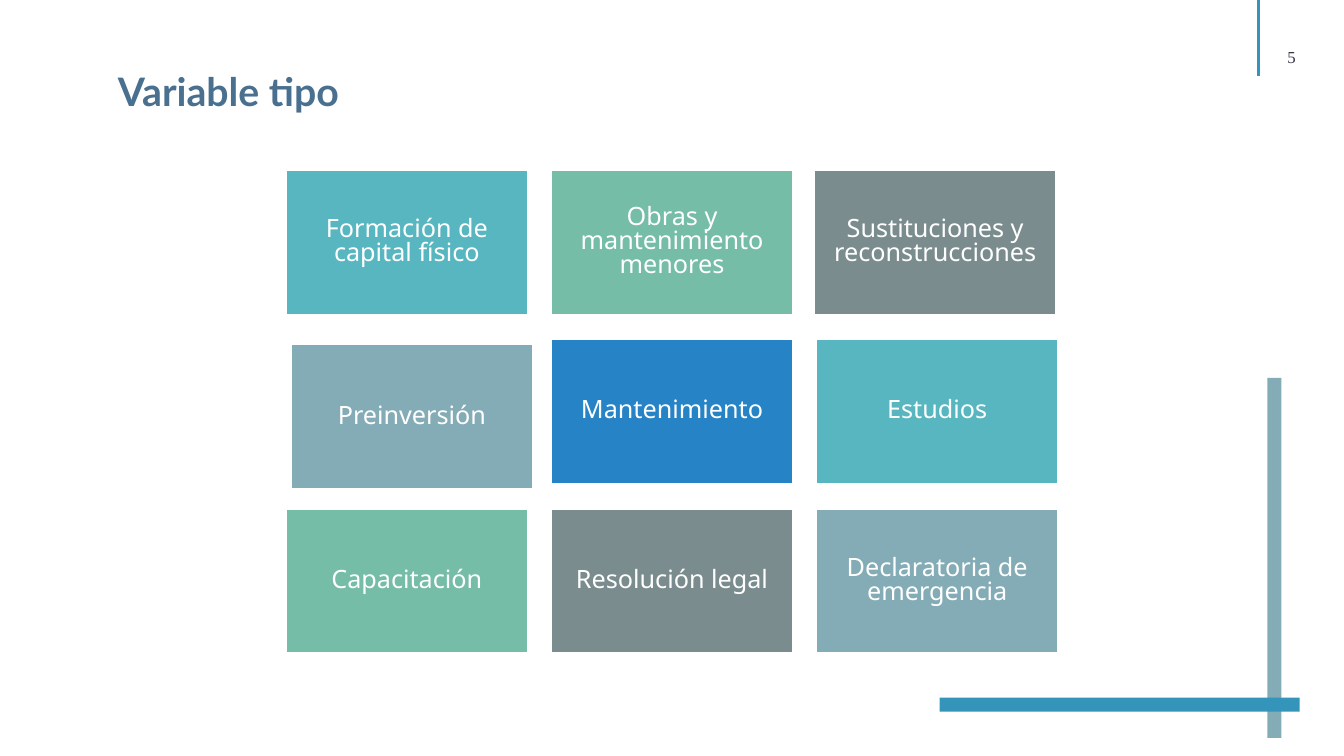
import pptx
import pptx.util
import pptx.dml.color
import pptx.enum.shapes
import pptx.enum.text
import pptx.oxml.ns
from dataclasses import dataclass
from lxml import etree

Inches, Pt = pptx.util.Inches, pptx.util.Pt
ALIGN = pptx.enum.text.PP_ALIGN
ANCHOR = pptx.enum.text.MSO_ANCHOR


def rgb(value):
    return pptx.dml.color.RGBColor.from_string(value)


@dataclass(frozen=True)
class Theme:
    white: str = "FFFFFF"
    title: str = "4A7090"
    number: str = "373545"
    accent: str = "3494BA"
    blue: str = "2683C6"
    teal: str = "58B6C0"
    green: str = "75BDA7"
    slate: str = "7A8C8E"
    mist: str = "84ACB6"
    title_size: int = 28
    tile_size: int = 18
    number_size: int = 12


class SlideBuilder:
    def __init__(self, prs, theme):
        self.theme = theme
        self.s = prs.slides.add_slide(prs.slide_layouts[5])

    def set_text(self, tf, text, font, size, color, bold=False,
                 align=ALIGN.LEFT, spacing=1.0, **frame):
        frame = {"word_wrap": True, "auto_size": pptx.enum.text.MSO_AUTO_SIZE.NONE,
                 "vertical_anchor": ANCHOR.TOP, **frame}
        for name, value in frame.items():
            setattr(tf, name, value)
        p = tf.paragraphs[0]
        p.alignment, p.line_spacing = align, spacing
        r = p.add_run()
        r.text = text
        for name, value in {"name": font, "size": Pt(size), "bold": bold}.items():
            setattr(r.font, name, value)
        r.font.color.rgb = rgb(color)

    def title(self, text, left, top, width, height):
        sp = self.s.shapes.title
        box = {"left": left, "top": top, "width": width, "height": height}
        for name, value in box.items():
            setattr(sp, name, Inches(value))
        self.set_text(sp.text_frame, text, "Lato", self.theme.title_size,
                      self.theme.title, bold=True)

    def number(self, text, left, top, width, height):
        sp = self.s.shapes.add_textbox(*map(Inches, (left, top, width, height)))
        self.set_text(sp.text_frame, text, "Times New Roman", self.theme.number_size,
                      self.theme.number, align=ALIGN.CENTER, margin_top=0, margin_bottom=0)

    def line(self, x1, y1, x2, y2, color, width):
        c = self.s.shapes.add_connector(pptx.enum.shapes.MSO_CONNECTOR.STRAIGHT,
                                        *map(Inches, (x1, y1, x2, y2)))
        c.line.color.rgb, c.line.width = rgb(color), Pt(width)
        etree.SubElement(c._element.spPr, pptx.oxml.ns.qn("a:effectLst"))

    def bar(self, left, top, width, height, color):
        sp = self.s.shapes.add_shape(pptx.enum.shapes.MSO_SHAPE.RECTANGLE,
                                     *map(Inches, (left, top, width, height)))
        sp.shadow.inherit = False
        sp.fill.solid()
        sp.fill.fore_color.rgb = rgb(color)
        sp.line.fill.background()
        return sp

    def tile(self, text, left, top, width, height, color):
        sp = self.bar(left, top, width, height, color)
        sp.line.color.rgb, sp.line.width = rgb(self.theme.white), Pt(1)
        sides = ("left", "right", "top", "bottom")
        margins = {f"margin_{side}": Inches(0.07) for side in sides}
        self.set_text(sp.text_frame, text, "Noto Sans", self.theme.tile_size,
                      self.theme.white, align=ALIGN.CENTER, spacing=0.8,
                      vertical_anchor=ANCHOR.MIDDLE, **margins)


def main():
    prs = pptx.Presentation()
    prs.slide_width, prs.slide_height = Inches(13.33), Inches(7.5)
    theme = Theme()
    slide = SlideBuilder(prs, theme)

    # Page number and its rule
    slide.number("5", 12.41, 0.46, 0.8, 0.2)
    slide.line(12.48, 0, 12.48, 0.75, theme.accent, 2.25)

    # Crossed corner bars
    slide.bar(12.57, 3.75, 0.14, 3.57, theme.mist)
    slide.bar(9.32, 6.92, 3.57, 0.14, theme.accent)

    # Grid of types, two tiles slightly off the grid
    tiles = [
        ("Formación de capital físico", theme.teal),
        ("Obras y mantenimiento menores", theme.green),
        ("Sustituciones y reconstrucciones", theme.slate),
        ("Preinversión", theme.mist),
        ("Mantenimiento", theme.blue),
        ("Estudios", theme.teal),
        ("Capacitación", theme.green),
        ("Resolución legal", theme.slate),
        ("Declaratoria de emergencia", theme.mist),
    ]
    nudges = {2: (-0.02, 0), 3: (0.05, 0.05)}
    for i, (text, color) in enumerate(tiles):
        row, col = divmod(i, 3)
        dx, dy = nudges.get(i, (0, 0))
        slide.tile(text, 2.84 + 2.63 * col + dx, 1.69 + 1.68 * row + dy,
                   2.39, 1.43, color)

    # Title
    slide.title("Variable tipo", 1.07, 0.62, 4.78, 0.57)

    prs.save("out.pptx")


if __name__ == "__main__":
    main()
